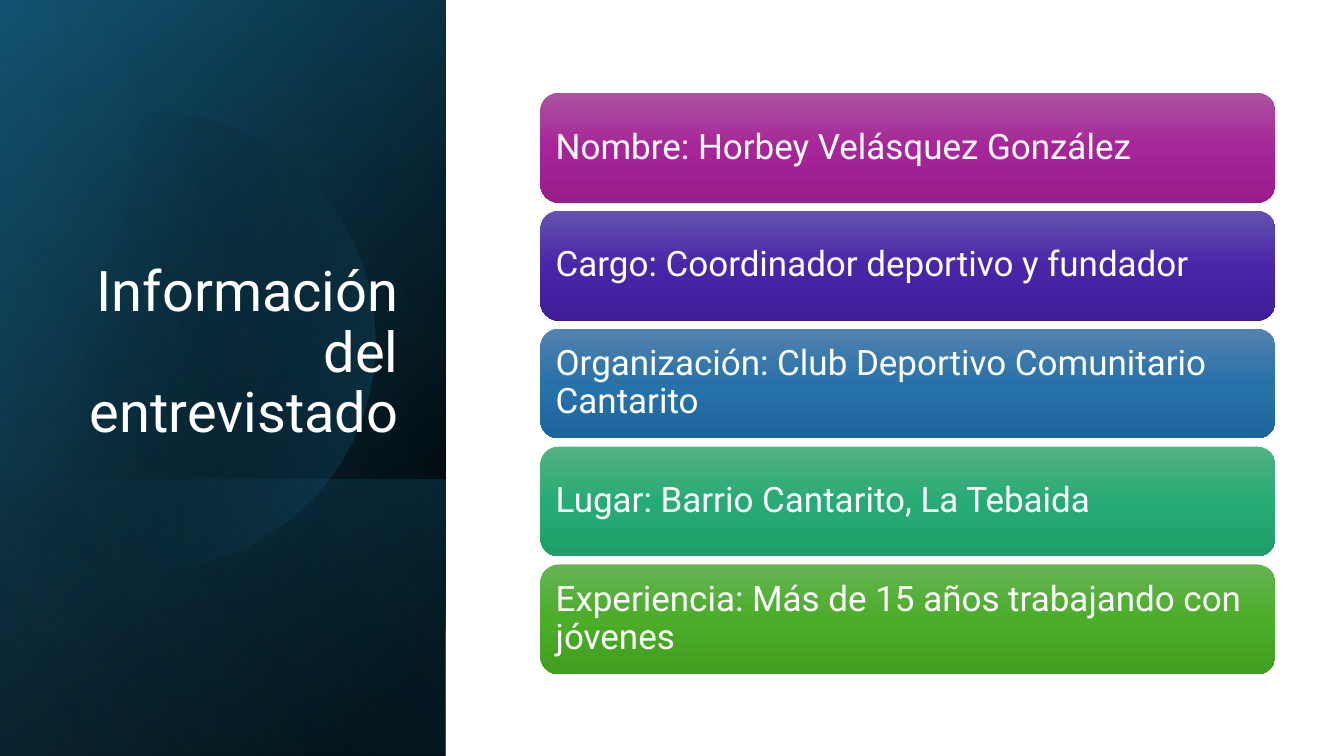
"""Builds the slide that introduces the interviewee."""
from math import acos, cos, sin

from pptx import Presentation
from pptx.dml.color import RGBColor
from pptx.enum.shapes import MSO_SHAPE
from pptx.enum.text import MSO_ANCHOR, PP_ALIGN
from pptx.oxml import parse_xml
from pptx.oxml.ns import nsdecls, qn
from pptx.util import Inches, Pt

TITLE = "Información del entrevistado"
FACTS = [
    ("Nombre: Horbey Velásquez González", "magenta"),
    ("Cargo: Coordinador deportivo y fundador", "violet"),
    ("Organización: Club Deportivo Comunitario Cantarito", "blue"),
    ("Lugar: Barrio Cantarito, La Tebaida", "teal"),
    ("Experiencia: Más de 15 años trabajando con jóvenes", "green"),
]
COLORS = {
    "white": "FFFFFF", "black": "000000",
    "navy": "104862", "ocean": "156082", "sky": "46B1E1",
    "magenta": ("AC53A0", "A62598", "991C8B"),
    "violet": ("6553AE", "4926A8", "3E1C9A"),
    "blue": ("5382AF", "2772A9", "1D669C"),
    "teal": ("54B183", "27AB74", "1E9E68"),
    "green": ("66B354", "4BAD28", "409F1E"),
}
FONT = "Roboto"
SLIDE_W, SLIDE_H, PANEL_W = 13.33, 7.5, 4.42
BAR_LEFT, BAR_TOP, BAR_W, BAR_H, BAR_STEP = 5.36, 0.92, 7.29, 1.09, 1.17
GLOW_X, GLOW_Y, GLOW_R, GLOW_POINTS = 1.44, 3.38, 2.28, 120

# Each layer: top, angle, stops of (position %, colour, opacity %)
BACK_LAYERS = [
    (0, 50, [(8, COLORS["black"], 100), (100, COLORS["navy"], 100)]),
    (0, 30, [(0, COLORS["black"], 0), (99, COLORS["ocean"], 46)]),
    (4.76, 130, [(2, COLORS["ocean"], 29), (100, COLORS["black"], 30)]),
]
GLOW_STOPS = [(29, COLORS["black"], 0), (100, COLORS["ocean"], 43)]
SHEEN_LAYER = (0, 120, [(0, COLORS["black"], 0), (99, COLORS["sky"], 11)])


def paint(shape, angle, stops):
    shape.shadow.inherit = False
    shape.line.fill.background()
    shape.fill.background()
    stop_xml = "".join(
        f'<a:gs pos="{position * 1000}"><a:srgbClr val="{color}">'
        f'<a:alpha val="{opacity * 1000}"/></a:srgbClr></a:gs>'
        for position, color, opacity in stops)
    gradient = parse_xml(
        f'<a:gradFill {nsdecls("a")} rotWithShape="1"><a:gsLst>{stop_xml}</a:gsLst>'
        f'<a:lin ang="{angle * 60000}" scaled="0"/></a:gradFill>')
    properties = shape._element.spPr
    properties.replace(properties.find(qn("a:noFill")), gradient)


def write(shape, text, size, anchor, align=PP_ALIGN.LEFT, inset_y=0.05):
    frame = shape.text_frame
    frame.word_wrap = True
    frame.vertical_anchor = anchor
    frame.margin_left = frame.margin_right = Inches(0.1)
    frame.margin_top = frame.margin_bottom = Inches(inset_y)
    paragraph = frame.paragraphs[0]
    paragraph.alignment = align
    paragraph.line_spacing = 0.9
    run = paragraph.add_run()
    run.text = text
    run.font.name = FONT
    run.font.size = Pt(size)
    run.font.color.rgb = RGBColor.from_string(COLORS["white"])


def add_layer(slide, top, angle, stops):
    height = SLIDE_H - top
    left = (PANEL_W - height) / 2
    layer = slide.shapes.add_shape(
        MSO_SHAPE.RECTANGLE, Inches(left), Inches(top - left),
        Inches(height), Inches(PANEL_W))
    layer.rotation = 90
    layer._element.spPr.find(qn("a:xfrm")).set("flipH", "1")
    paint(layer, angle, stops)


def add_glow(slide):
    reach = acos(-GLOW_X / GLOW_R)
    angles = [reach * (2 * i / GLOW_POINTS - 1) for i in range(GLOW_POINTS + 1)]
    arc = [(Inches(GLOW_X + GLOW_R * cos(a)), Inches(GLOW_Y + GLOW_R * sin(a)))
           for a in angles]
    builder = slide.shapes.build_freeform(*arc[0])
    builder.add_line_segments(arc[1:], close=True)
    paint(builder.convert_to_shape(), 14, GLOW_STOPS)


def main():
    deck = Presentation()
    deck.slide_width, deck.slide_height = Inches(SLIDE_W), Inches(SLIDE_H)
    slide = deck.slides.add_slide(deck.slide_layouts[6])

    for layer in BACK_LAYERS:
        add_layer(slide, *layer)
    add_glow(slide)
    add_layer(slide, *SHEEN_LAYER)

    title = slide.shapes.add_textbox(
        Inches(0.64), Inches(1.84), Inches(3.41), Inches(2.62))
    write(title, TITLE, size=40, anchor=MSO_ANCHOR.BOTTOM, align=PP_ALIGN.RIGHT)

    for row, (fact, shade) in enumerate(FACTS):
        bar = slide.shapes.add_shape(
            MSO_SHAPE.ROUNDED_RECTANGLE, Inches(BAR_LEFT),
            Inches(BAR_TOP + row * BAR_STEP), Inches(BAR_W), Inches(BAR_H))
        paint(bar, 90, [(50 * i, color, 100) for i, color in enumerate(COLORS[shade])])
        write(bar, fact, size=25, anchor=MSO_ANCHOR.MIDDLE, inset_y=0.1)

    deck.save("out.pptx")


if __name__ == "__main__":
    main()
